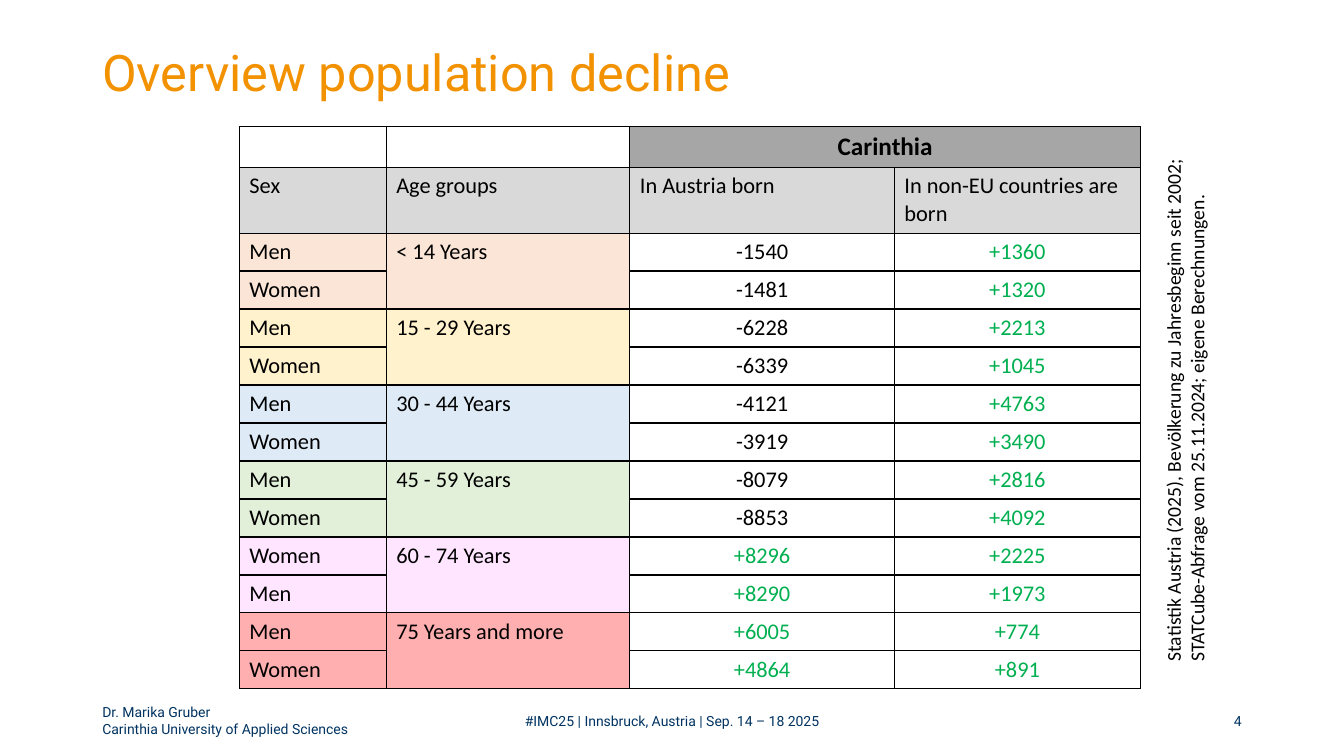
from lxml.etree import SubElement
from pptx import Presentation
from pptx.dml.color import RGBColor
from pptx.enum.text import MSO_ANCHOR, PP_ALIGN
from pptx.oxml.ns import qn
from pptx.util import Pt

# Content
TITLE = "Overview population decline"
AUTHOR = ["Dr. Marika Gruber", "Carinthia University of Applied Sciences"]
EVENT = "#IMC25 | Innsbruck, Austria | Sep. 14 – 18 2025"
PAGE = "4"
SOURCE = ("Statistik Austria (2025), Bevölkerung zu Jahresbeginn seit 2002; "
          "STATCube-Abfrage vom 25.11.2024; eigene Berechnungen.")
REGION = "Carinthia"
HEADS = ["Sex", "Age groups", "In Austria born", "In non-EU countries are born"]

# Colours
ORANGE = RGBColor(0xF3, 0x92, 0x00)
NAVY = RGBColor(0x00, 0x33, 0x61)
BLACK = RGBColor(0, 0, 0)
WHITE = RGBColor(0xFF, 0xFF, 0xFF)
GREEN = RGBColor(0x00, 0xB0, 0x50)
GREY = RGBColor(0xA6, 0xA6, 0xA6)
PALE = RGBColor(0xD9, 0xD9, 0xD9)
PEACH = RGBColor(0xFB, 0xE5, 0xD6)
CREAM = RGBColor(0xFF, 0xF2, 0xCC)
SKY = RGBColor(0xDE, 0xEB, 0xF7)
MINT = RGBColor(0xE2, 0xF0, 0xD9)
PINK = RGBColor(0xFF, 0xE5, 0xFF)
RED = RGBColor(0xFF, 0xAF, 0xAF)

# Age group, fill, then sex and the two changes
GROUPS = [
    ("< 14 Years", PEACH, [("Men", "-1540", "+1360"), ("Women", "-1481", "+1320")]),
    ("15 - 29 Years", CREAM, [("Men", "-6228", "+2213"), ("Women", "-6339", "+1045")]),
    ("30 - 44 Years", SKY, [("Men", "-4121", "+4763"), ("Women", "-3919", "+3490")]),
    ("45 - 59 Years", MINT, [("Men", "-8079", "+2816"), ("Women", "-8853", "+4092")]),
    ("60 - 74 Years", PINK, [("Women", "+8296", "+2225"), ("Men", "+8290", "+1973")]),
    ("75 Years and more", RED, [("Men", "+6005", "+774"), ("Women", "+4864", "+891")]),
]

# Layout
LEFT, WIDTH = 66, 828
FOOT, FOOT_H = 500.4, 28.8
COLS = [104.9, 174, 189, 175.7]
ROWS = [29.2, 46.8] + [27.15] * 12


def write(frame, lines, size, font, color, align=PP_ALIGN.LEFT, bold=False):
    para = frame.paragraphs[0]
    para.alignment = align
    for i, line in enumerate(lines):
        if i:
            para.add_line_break()
        run = para.add_run()
        run.text = line
        run.font.size = Pt(size)
        run.font.name = font
        run.font.bold = bold
        run.font.color.rgb = color
    return para


def add_box(slide, x, y, w, h, anchor=MSO_ANCHOR.MIDDLE):
    box = slide.shapes.add_textbox(Pt(x), Pt(y), Pt(w), Pt(h))
    box.text_frame.word_wrap = True
    box.text_frame.vertical_anchor = anchor
    return box


def edge(cell):
    props = cell._tc.get_or_add_tcPr()
    for i, side in enumerate(("a:lnL", "a:lnR", "a:lnT", "a:lnB")):
        line = props.makeelement(qn(side), {"w": str(Pt(1))})
        fill = SubElement(line, qn("a:solidFill"))
        SubElement(fill, qn("a:srgbClr"), val=str(BLACK))
        props.insert(i, line)


def put(cell, text, fill, color=BLACK, align=PP_ALIGN.LEFT, size=16, bold=False):
    cell.fill.solid()
    cell.fill.fore_color.rgb = fill
    write(cell.text_frame, [text], size, "Calibri", color, align, bold)


def add_grid(slide):
    frame = slide.shapes.add_table(len(ROWS), len(COLS), Pt(171), Pt(90.5),
                                   Pt(sum(COLS)), Pt(sum(ROWS)))
    grid = frame.table
    grid.first_row = grid.horz_banding = False
    for col, width in zip(grid.columns, COLS):
        col.width = Pt(width)
    for row, height in zip(grid.rows, ROWS):
        row.height = Pt(height)
    for cell in grid.iter_cells():
        cell.fill.background()
        edge(cell)

    # Heading rows
    grid.cell(0, 2).merge(grid.cell(0, 3))
    put(grid.cell(0, 2), REGION, GREY, align=PP_ALIGN.CENTER, size=18, bold=True)
    for c, head in enumerate(HEADS):
        put(grid.cell(1, c), head, PALE)

    # Two rows for each age group; growth is green
    for g, (age, tint, pair) in enumerate(GROUPS):
        top = 2 + 2 * g
        grid.cell(top, 1).merge(grid.cell(top + 1, 1))
        put(grid.cell(top, 1), age, tint)
        for r, (sex, *nums) in enumerate(pair, top):
            put(grid.cell(r, 0), sex, tint)
            for c, num in enumerate(nums, 2):
                color = GREEN if num.startswith("+") else BLACK
                put(grid.cell(r, c), num, WHITE, color, PP_ALIGN.CENTER)


def main():
    deck = Presentation()
    deck.slide_width, deck.slide_height = Pt(960), Pt(540)
    slide = deck.slides.add_slide(deck.slide_layouts[6])

    # Title
    box = add_box(slide, LEFT, 28.8, WIDTH, 50.4)
    write(box.text_frame, [TITLE], 36, "Roboto", ORANGE).line_spacing = 0.9

    # Footer
    for lines, x, w, align in [
        (AUTHOR, LEFT, 216, PP_ALIGN.LEFT),
        ([EVENT], 318, 324, PP_ALIGN.CENTER),
        ([PAGE], LEFT + WIDTH - 216, 216, PP_ALIGN.RIGHT),
    ]:
        box = add_box(slide, x, FOOT, w, FOOT_H)
        write(box.text_frame, lines, 10, "Roboto", NAVY, align)

    add_grid(slide)

    # Source, read upwards
    box = add_box(slide, 643, 255.6, 406.8, 41, MSO_ANCHOR.TOP)
    box.rotation = 270
    write(box.text_frame, [SOURCE], 14, "Calibri", BLACK)

    deck.save("out.pptx")


if __name__ == "__main__":
    main()
